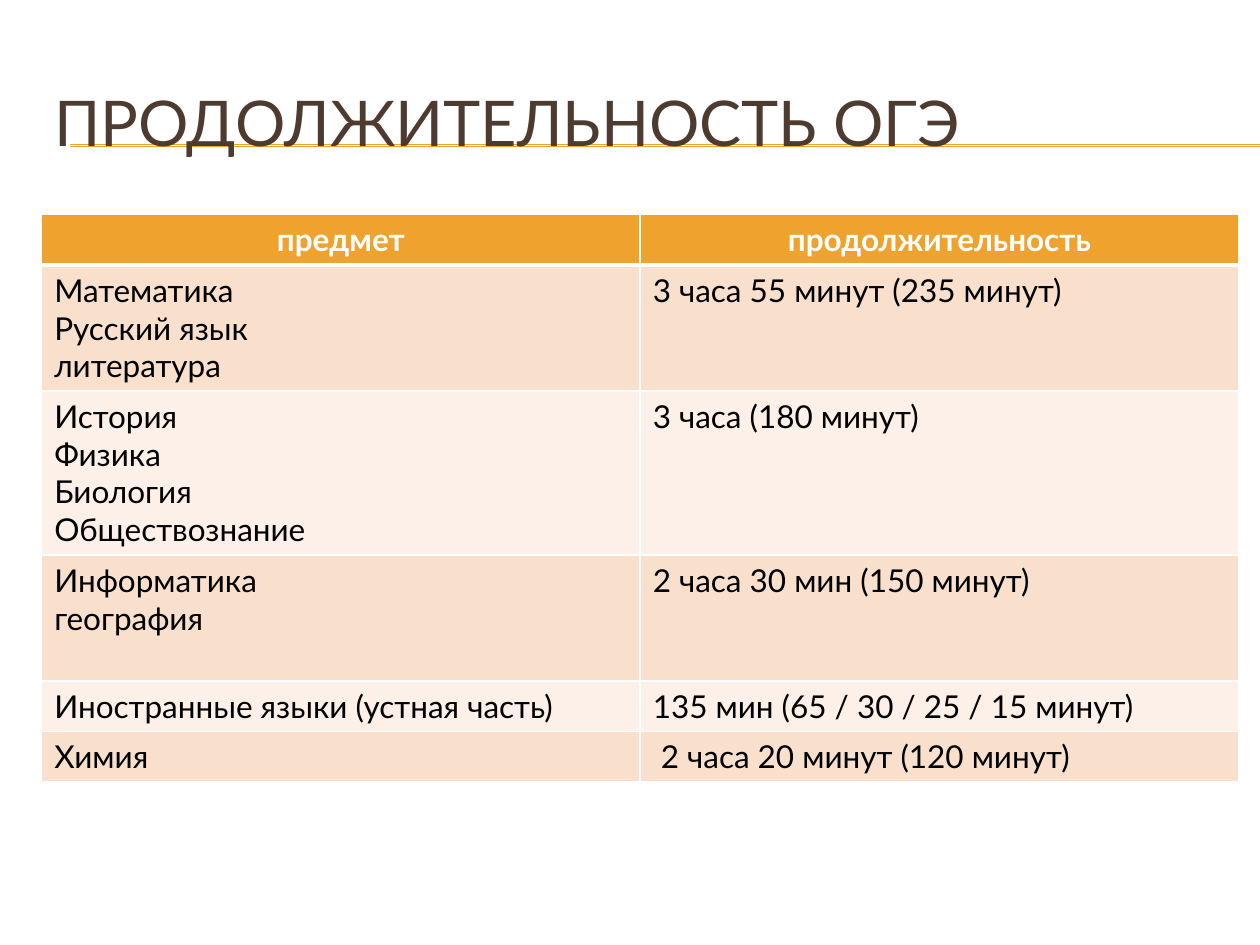
from lxml.etree import SubElement
from pptx import Presentation
from pptx.dml.color import RGBColor
from pptx.enum.shapes import MSO_CONNECTOR as Connector
from pptx.enum.text import MSO_ANCHOR as Anchor, PP_ALIGN as Align
from pptx.oxml import parse_xml
from pptx.oxml.ns import nsdecls, qn
from pptx.util import Cm, Pt

# Content
TITLE = "ПРОДОЛЖИТЕЛЬНОСТЬ ОГЭ"
HEADER = ("предмет", "продолжительность")
EXAMS = [  # subjects, duration, height in lines
    ("Математика\nРусский язык\nлитература", "3 часа 55 минут (235 минут)", 3),
    ("История\nФизика\nБиология\nОбществознание", "3 часа (180 минут)", 4),
    ("Информатика\nгеография", "2 часа 30 мин (150 минут)", 3),
    ("Иностранные языки (устная часть)", "135 мин (65 / 30 / 25 / 15 минут)", 1),
    ("Химия", " 2 часа 20 минут (120 минут)", 1),
]

THEME = {
    "font": "Lato", "title_size": 36, "table_size": 18,
    "title": "4E3B30", "accent": "F0A22E", "text": "000000",
    "white": "FFFFFF", "bands": ("F9E0CD", "FCF0E8"),
}

# Layout, in centimetres
SLIDE_W, SLIDE_H = 25.4, 19.05
LEFT, WIDTH = 0.84, 24.13
TITLE_TOP, TITLE_H = 1.27, 2.34
TABLE_TOP = 4.32
LINE_H, CELL_PADDING = 0.76, 0.26
RULE_LEFT, RULE_TOPS = 1.42, (2.92, 2.95)


def color(key):
    return RGBColor.from_string(THEME[key])


def style(paragraph, size, color_key, align, bold=False):
    paragraph.alignment = align
    font = paragraph.font
    font.name, font.size, font.bold = THEME["font"], Pt(THEME[size]), bold
    font.color.rgb = color(color_key)


def set_borders(cell, bottom_width):
    properties = cell._tc.get_or_add_tcPr()
    widths = {"lnL": 1, "lnR": 1, "lnT": 1, "lnB": bottom_width}
    for position, (side, width) in enumerate(widths.items()):
        properties.insert(position, parse_xml(
            f'<a:{side} {nsdecls("a")} w="{Pt(width)}"><a:solidFill>'
            f'<a:srgbClr val="{THEME["white"]}"/></a:solidFill></a:{side}>'))


def fill_cell(cell, text, fill, is_header):
    cell.text = text
    cell.fill.solid()
    cell.fill.fore_color.rgb = RGBColor.from_string(fill)
    for paragraph in cell.text_frame.paragraphs:
        style(paragraph, "table_size", "white" if is_header else "text",
              Align.CENTER if is_header else Align.LEFT, is_header)
    set_borders(cell, 3 if is_header else 1)


def add_rules(slide):
    for position, top in enumerate(RULE_TOPS):
        rule = slide.shapes.add_connector(
            Connector.STRAIGHT, Cm(RULE_LEFT), Cm(top), Cm(SLIDE_W), Cm(top))
        rule.line.color.rgb = color("accent")
        rule.line.width = Pt(0.75)
        SubElement(rule._element.spPr, qn("a:effectLst"))
        # Behind the title, after the two group property elements
        slide.shapes._spTree.insert(2 + position, rule._element)


def add_title(slide):
    title = slide.shapes.title
    title.left, title.top = Cm(LEFT), Cm(TITLE_TOP)
    title.width, title.height = Cm(WIDTH), Cm(TITLE_H)
    title.text_frame.text = TITLE
    title.text_frame.vertical_anchor = Anchor.MIDDLE
    style(title.text_frame.paragraphs[0], "title_size", "title", Align.LEFT)


def add_exam_table(slide):
    rows = [(*HEADER, 1), *EXAMS]
    heights = [CELL_PADDING + LINE_H * lines for *_, lines in rows]
    table = slide.shapes.add_table(
        len(rows), len(HEADER), Cm(LEFT), Cm(TABLE_TOP),
        Cm(WIDTH), Cm(sum(heights))).table
    for index, (*texts, _) in enumerate(rows):
        table.rows[index].height = Cm(heights[index])
        fill = THEME["bands"][(index - 1) % 2] if index else THEME["accent"]
        for column, text in enumerate(texts):
            fill_cell(table.cell(index, column), text, fill, index == 0)


def main():
    deck = Presentation()
    deck.slide_width, deck.slide_height = Cm(SLIDE_W), Cm(SLIDE_H)
    slide = deck.slides.add_slide(deck.slide_layouts.get_by_name("Title Only"))
    add_rules(slide)
    add_title(slide)
    add_exam_table(slide)
    deck.save("out.pptx")


if __name__ == "__main__":
    main()
